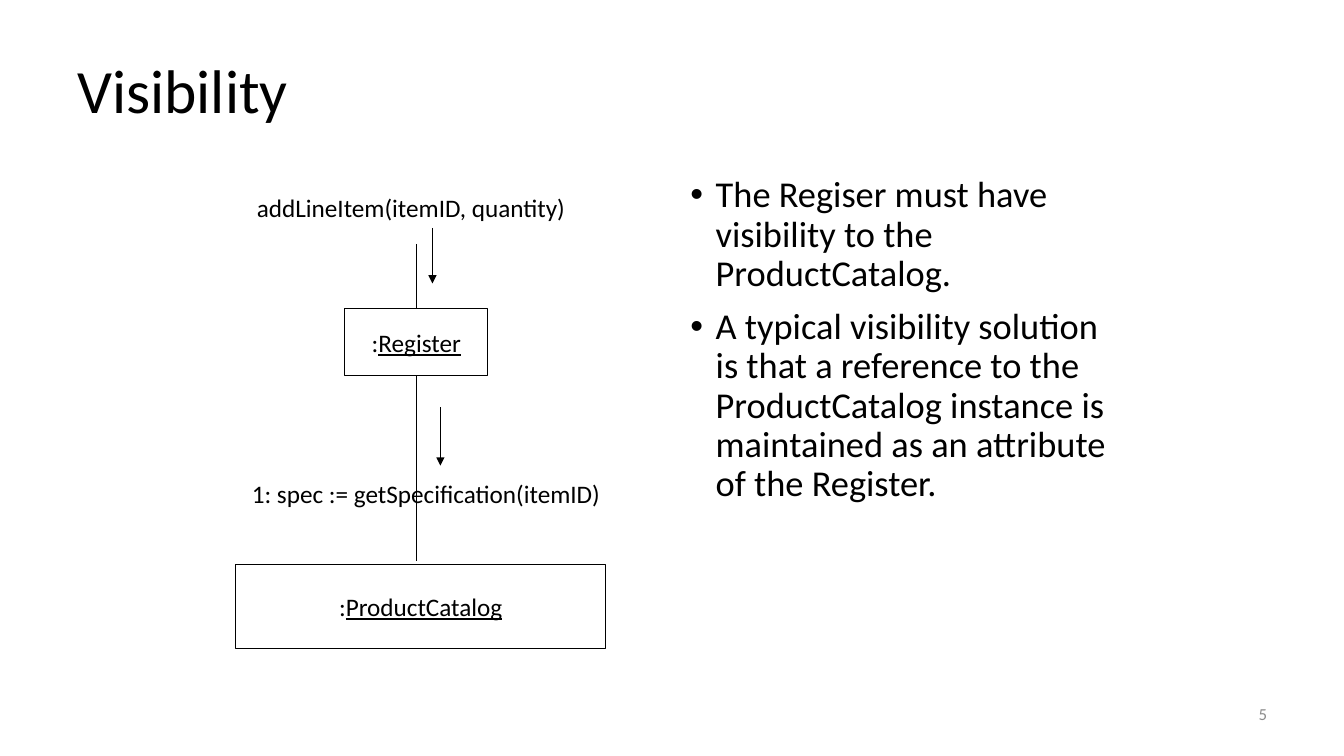
from dataclasses import dataclass
from typing import Optional

from lxml import etree
from pptx import Presentation
from pptx.dml.color import RGBColor
from pptx.enum.shapes import MSO_CONNECTOR, MSO_SHAPE
from pptx.enum.text import MSO_ANCHOR, MSO_AUTO_SIZE, PP_ALIGN
from pptx.oxml.ns import qn
from pptx.shapes.autoshape import Shape
from pptx.slide import Slide
from pptx.text.text import TextFrame, _Paragraph
from pptx.util import Pt

RECTANGLE = MSO_SHAPE.RECTANGLE
STRAIGHT = MSO_CONNECTOR.STRAIGHT
MIDDLE, TOP = MSO_ANCHOR.MIDDLE, MSO_ANCHOR.TOP
LEFT, CENTER, RIGHT = PP_ALIGN.LEFT, PP_ALIGN.CENTER, PP_ALIGN.RIGHT
NO_AUTOFIT, GROW = MSO_AUTO_SIZE.NONE, MSO_AUTO_SIZE.SHAPE_TO_FIT_TEXT

COLOURS = {"ink": "000000", "paper": "FFFFFF", "number": "8C8C8C"}
FONT = "Calibri"
LABEL_SIZE = 18
LINE_WIDTH = 0.75
LINE_SPACING = 0.9
BULLET_INDENT = 18
LIFELINE_X = 297.36


@dataclass(frozen=True)
class Area:
    left: float
    top: float
    width: float
    height: float


@dataclass(frozen=True)
class ObjectBox:
    name: str
    area: Area


@dataclass(frozen=True)
class Label:
    text: str
    area: Area


@dataclass(frozen=True)
class Line:
    x: float
    top: float
    bottom: float
    arrow: bool = False
    begin_box: Optional[str] = None
    end_box: Optional[str] = None


BOXES = [
    ObjectBox("Register", Area(LIFELINE_X - 51.12, 220.3, 102.24, 48.2)),
    ObjectBox("ProductCatalog", Area(168.5, 403.2, 264.2, 59.8)),
]
LABELS = [
    Label("1: spec := getSpecification(itemID)", Area(172.8, 338.4, 266.4, 28.8)),
    Label("addLineItem(itemID, quantity)", Area(176.4, 133.9, 237.6, 28.8)),
]
LINES = [
    Line(LIFELINE_X, 174.2, 220.3, end_box="Register"),
    Line(LIFELINE_X, 268.5, 401, begin_box="Register"),
    Line(308.9, 162.7, 202.5, arrow=True),
    Line(314.6, 290.9, 332.6, arrow=True),
]
POINTS = [
    "The Regiser must have visibility to the ProductCatalog.",
    "A typical visibility solution is that a reference to the "
    "ProductCatalog instance is maintained as an attribute of the Register.",
]


def colour(name: str) -> RGBColor:
    return RGBColor.from_string(COLOURS[name])


def add_span(para: _Paragraph, text: str, size: float,
             ink: str = "ink", underline: bool = False) -> None:
    span = para.add_run()
    span.text = text
    span.font.name = FONT
    span.font.size = Pt(size)
    span.font.color.rgb = colour(ink)
    if underline:
        span.font.underline = True


def place(shape: Shape, area: Area) -> None:
    shape.left, shape.top = Pt(area.left), Pt(area.top)
    shape.width, shape.height = Pt(area.width), Pt(area.height)


def add_text_box(page: Slide, area: Area) -> TextFrame:
    box = page.shapes.add_textbox(Pt(area.left), Pt(area.top),
                                  Pt(area.width), Pt(area.height))
    return box.text_frame


def fill_title(page: Slide, text: str) -> None:
    title = page.shapes.title
    place(title, Area(48, 21.6, 864, 90))
    title.text_frame.vertical_anchor = MIDDLE
    title.text_frame.auto_size = NO_AUTOFIT
    para = title.text_frame.paragraphs[0]
    para.alignment = LEFT
    para.line_spacing = LINE_SPACING
    add_span(para, text, 44)


def add_bullet(para: _Paragraph) -> None:
    properties = para._p.get_or_add_pPr()
    properties.set("marL", str(Pt(BULLET_INDENT)))
    properties.set("indent", str(-Pt(BULLET_INDENT)))
    etree.SubElement(properties, qn("a:buFont")).set("typeface", "Arial")
    etree.SubElement(properties, qn("a:buChar")).set("char", "•")


def fill_body(page: Slide, points: list[str]) -> None:
    body = page.placeholders[1]
    place(body, Area(486, 122.4, 317.5, 356.4))
    frame = body.text_frame
    frame.vertical_anchor = TOP
    frame.auto_size = NO_AUTOFIT
    for index, point in enumerate(points):
        para = frame.add_paragraph() if index else frame.paragraphs[0]
        para.line_spacing = LINE_SPACING
        para.space_before = Pt(10)
        add_bullet(para)
        add_span(para, point, 26)


def add_object_box(page: Slide, item: ObjectBox) -> Shape:
    area = item.area
    box = page.shapes.add_shape(RECTANGLE, Pt(area.left), Pt(area.top),
                                Pt(area.width), Pt(area.height))
    box.shadow.inherit = False
    box.fill.solid()
    box.fill.fore_color.rgb = colour("paper")
    box.line.color.rgb = colour("ink")
    box.line.width = Pt(LINE_WIDTH)
    frame = box.text_frame
    frame.word_wrap = False
    frame.vertical_anchor = MIDDLE
    para = frame.paragraphs[0]
    para.alignment = CENTER
    add_span(para, ":", LABEL_SIZE)
    add_span(para, item.name, LABEL_SIZE, underline=True)
    return box


def add_label(page: Slide, label: Label) -> None:
    frame = add_text_box(page, label.area)
    frame.word_wrap = False
    frame.auto_size = GROW
    add_span(frame.paragraphs[0], label.text, LABEL_SIZE)


def add_line(page: Slide, line: Line, boxes: dict[str, Shape]) -> None:
    connector = page.shapes.add_connector(STRAIGHT, Pt(line.x), Pt(line.top),
                                          Pt(line.x), Pt(line.bottom))
    connector.line.color.rgb = colour("ink")
    connector.line.width = Pt(LINE_WIDTH)
    if line.arrow:
        outline = connector.line._get_or_add_ln()
        etree.SubElement(outline, qn("a:tailEnd")).set("type", "triangle")
    etree.SubElement(connector._element.spPr, qn("a:effectLst"))
    if line.begin_box:
        connector.begin_connect(boxes[line.begin_box], 2)
    if line.end_box:
        connector.end_connect(boxes[line.end_box], 0)


def add_page_number(page: Slide, number: str) -> None:
    frame = add_text_box(page, Area(688.3, 491.8, 223.9, 36))
    frame.word_wrap = True
    frame.vertical_anchor = MIDDLE
    para = frame.paragraphs[0]
    para.alignment = RIGHT
    add_span(para, number, 12, ink="number")


def main() -> None:
    deck = Presentation()
    deck.slide_width, deck.slide_height = Pt(960), Pt(540)
    page = deck.slides.add_slide(deck.slide_layouts[1])
    fill_title(page, "Visibility")
    fill_body(page, POINTS)
    boxes = {item.name: add_object_box(page, item) for item in BOXES}
    for label in LABELS:
        add_label(page, label)
    for line in LINES:
        add_line(page, line, boxes)
    add_page_number(page, "5")
    deck.save("out.pptx")


if __name__ == "__main__":
    main()
